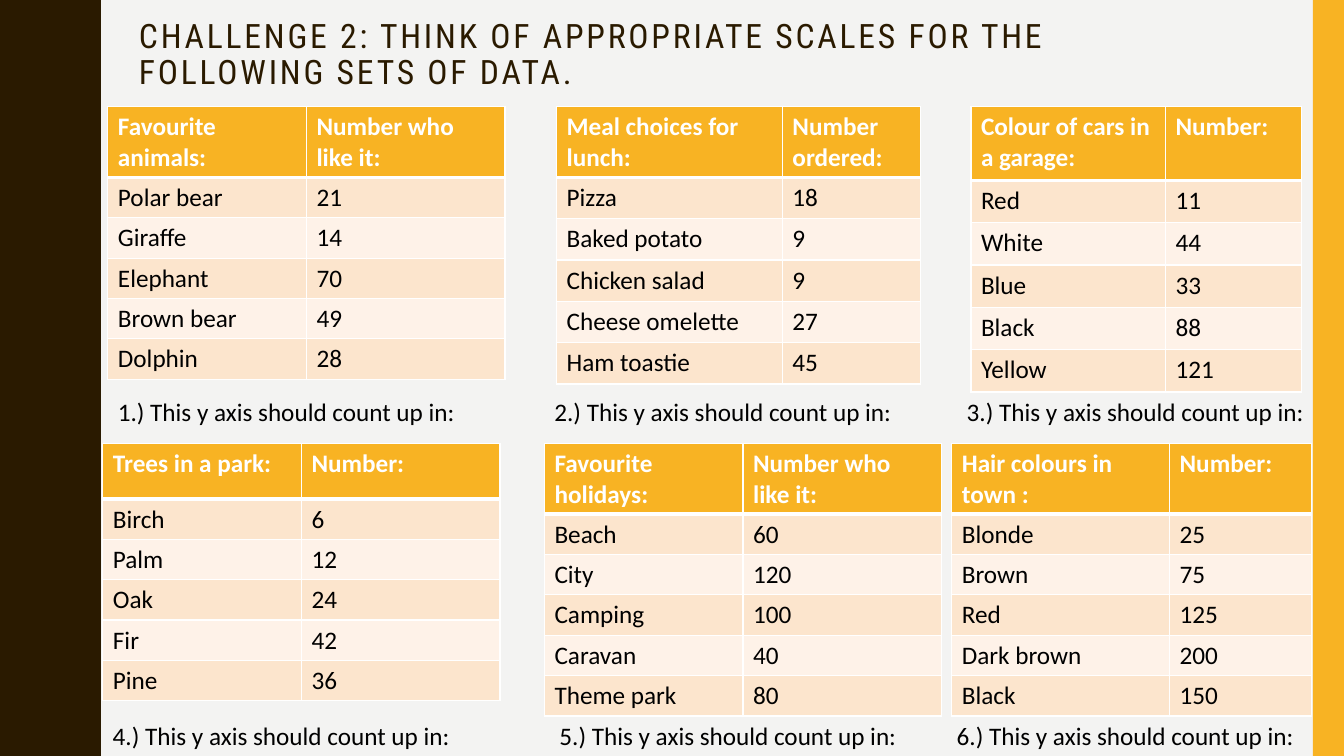
from lxml import etree
from pptx import Presentation
from pptx.dml.color import RGBColor
from pptx.enum.shapes import MSO_SHAPE
from pptx.oxml.ns import qn
from pptx.util import Inches, Pt

RECTANGLE = MSO_SHAPE.RECTANGLE
BROWN, GOLD, WHITE, BLACK = "2A1A00", "F8B323", "FFFFFF", "000000"
BANDS = ["FEF2E8", "FCE5CD"]


def color(hex_code):
    return RGBColor.from_string(hex_code)


def style_text(frame, font, size, hex_code, bold=False):
    frame.word_wrap = True
    for span in frame.paragraphs[0].runs:
        span.font.name = font
        span.font.size = Pt(size)
        span.font.bold = bold
        span.font.color.rgb = color(hex_code)


deck = Presentation()
deck.slide_width = Inches(13.33)
deck.slide_height = Inches(7.5)
page = deck.slides.add_slide(deck.slide_layouts[6])
page.background.fill.solid()
page.background.fill.fore_color.rgb = color("F3F3F2")

half_wave = [(0.78, 0), (0.78, 0.07), (0.79, 0.14), (0.8, 0.2), (0.81, 0.25),
             (0.83, 0.29), (0.85, 0.33), (0.87, 0.38), (0.89, 0.42), (0.91, 0.46),
             (0.93, 0.5), (0.95, 0.55), (0.96, 0.61), (0.97, 0.68), (0.97, 0.75)]
wave = half_wave + [(x, 1.5 - y) for x, y in reversed(half_wave[1:-1])]
outline = [(x, y + 1.5 * period) for period in range(5) for x, y in wave]
outline += [(0.78, 7.5), (0, 7.5)]
builder = page.shapes.build_freeform(0, 0, scale=Inches(1))
builder.add_line_segments(outline, close=True)
wavy_edge = builder.convert_to_shape()
gold_edge = page.shapes.add_shape(RECTANGLE, Inches(13.02), 0, Inches(0.31), Inches(7.5))
for edge, hex_code in [(wavy_edge, BROWN), (gold_edge, GOLD)]:
    edge.shadow.inherit = False
    edge.fill.solid()
    edge.fill.fore_color.rgb = color(hex_code)
    edge.line.fill.background()

title = page.shapes.add_textbox(Inches(1.28), Inches(0.14), Inches(11.13), Inches(1.63))
title.text_frame.text = "CHALLENGE 2: THINK OF APPROPRIATE SCALES FOR THE FOLLOWING SETS OF DATA."
title.text_frame.margin_right = Inches(0.5)
style_text(title.text_frame, "Roboto Condensed", 24, BROWN)
title_para = title.text_frame.paragraphs[0]
title_para.line_spacing = 0.9
title_para.runs[0].font._element.set("spc", "200")

# left, top, column widths, header height, row height, caption left, caption top, rows
data_sets = [
    (1.07, 1.06, (1.97, 1.97), 0.7, 0.4, 1.07, 3.88,
     [("Favourite animals:", "Number who like it:"), ("Polar bear", "21"),
      ("Giraffe", "14"), ("Elephant", "70"), ("Brown bear", "49"), ("Dolphin", "28")]),
    (5.52, 1.06, (2.24, 1.37), 0.7, 0.41, 5.4, 3.88,
     [("Meal choices for lunch:", "Number ordered:"), ("Pizza", "18"),
      ("Baked potato", "9"), ("Chicken salad", "9"), ("Cheese omelette", "27"),
      ("Ham toastie", "45")]),
    (9.63, 1.06, (1.93, 1.35), 0.73, 0.42, 9.49, 3.88,
     [("Colour of cars in a garage:", "Number:"), ("Red", "11"), ("White", "44"),
      ("Blue", "33"), ("Black", "88"), ("Yellow", "121")]),
    (1.02, 4.4, (1.97, 1.97), 0.55, 0.4, 1.02, 7.1,
     [("Trees in a park:", "Number:"), ("Birch", "6"), ("Palm", "12"),
      ("Oak", "24"), ("Fir", "42"), ("Pine", "36")]),
    (5.4, 4.4, (1.97, 1.97), 0.7, 0.4, 5.45, 7.1,
     [("Favourite holidays:", "Number who like it:"), ("Beach", "60"),
      ("City", "120"), ("Camping", "100"), ("Caravan", "40"), ("Theme park", "80")]),
    (9.44, 4.4, (2.16, 1.41), 0.7, 0.4, 9.39, 7.1,
     [("Hair colours in town :", "Number:"), ("Blonde", "25"), ("Brown", "75"),
      ("Red", "125"), ("Dark brown", "200"), ("Black", "150")]),
]

for number, data_set in enumerate(data_sets, 1):
    left, top, widths, header_height, row_height, caption_left, caption_top, rows = data_set
    table = page.shapes.add_table(
        len(rows), len(widths), Inches(left), Inches(top), Inches(sum(widths)),
        Inches(header_height + row_height * (len(rows) - 1))).table
    table.horz_banding = False
    for column, width in zip(table.columns, widths):
        column.width = Inches(width)
    for row_index, values in enumerate(rows):
        is_header = row_index == 0
        table.rows[row_index].height = Inches(header_height if is_header else row_height)
        for column_index, value in enumerate(values):
            cell = table.cell(row_index, column_index)
            cell.text_frame.text = value
            style_text(cell.text_frame, "Calibri", 18, WHITE if is_header else BLACK, is_header)
            properties = cell._tc.get_or_add_tcPr()
            for side in ["lnL", "lnR", "lnT", "lnB"]:
                thick = (row_index, side) in [(0, "lnB"), (1, "lnT")]
                border = etree.SubElement(properties, qn("a:" + side), w=str(Pt(3 if thick else 1)))
                border_fill = etree.SubElement(border, qn("a:solidFill"))
                etree.SubElement(border_fill, qn("a:srgbClr"), val=WHITE)
            cell.fill.solid()
            cell.fill.fore_color.rgb = color(GOLD if is_header else BANDS[row_index % 2])
    caption = page.shapes.add_textbox(
        Inches(caption_left), Inches(caption_top), Inches(3.84), Inches(0.4))
    caption.text_frame.text = f"{number}.) This y axis should count up in:"
    style_text(caption.text_frame, "Calibri", 18, BLACK)

deck.save("out.pptx")
